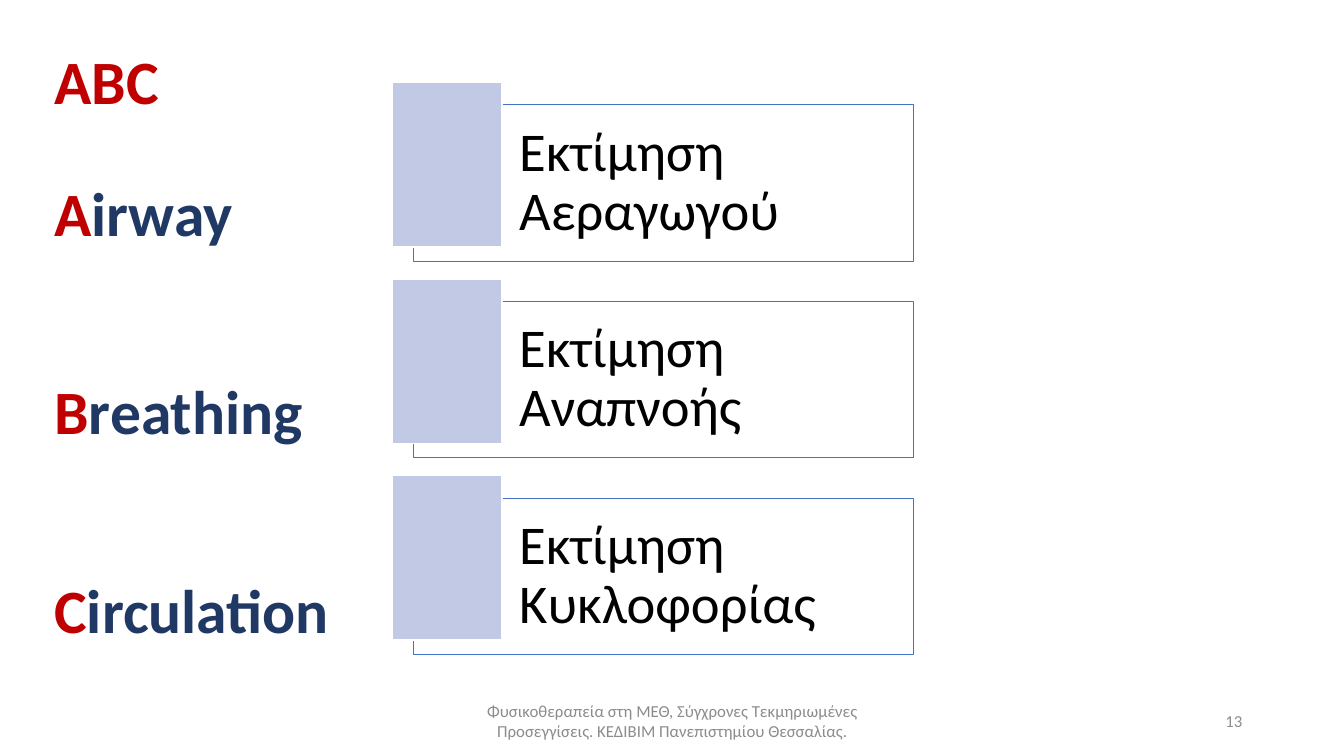
from dataclasses import dataclass

from lxml.etree import SubElement
from pptx import Presentation
from pptx.dml.color import RGBColor
from pptx.enum.shapes import MSO_SHAPE
from pptx.enum.text import MSO_ANCHOR, PP_ALIGN
from pptx.oxml.ns import qn
from pptx.util import Inches, Pt


@dataclass(frozen=True)
class Theme:
    font: str = "Calibri"
    red: str = "C00000"
    navy: str = "203864"
    black: str = "000000"
    gray: str = "8C8C8C"
    white: str = "FFFFFF"
    outline: str = "4472C4"
    tile: str = "C1C9E4"
    heading_size: int = 44
    card_size: int = 39
    footer_size: int = 12
    line_spacing: float = 0.9


THEME = Theme()
WIDTH, HEIGHT = 13.33, 7.5
HEADING_BOX = (0.44, -0.15, 3.98, 7.22)
CARDS_BOX = (3.89, 0.82, 5.17, 5.85)
FOOTER_BOX = (4.42, 6.95, 4.5, 0.4)
NUMBER_BOX = (9.42, 6.95, 3, 0.4)
HEADING_LINES = [("ABC", "", 0), ("A", "irway", 47), ("B", "reathing", 94), ("C", "irculation", 94)]
CARD_TEXTS = ["Εκτίμηση Αεραγωγού", "Εκτίμηση Αναπνοής", "Εκτίμηση Κυκλοφορίας"]
FOOTER = "Φυσικοθεραπεία στη ΜΕΘ, Σύγχρονες Τεκμηριωμένες Προσεγγίσεις. ΚΕΔΙΒΙΜ Πανεπιστημίου Θεσσαλίας."


def add_span(para, text, size, color, bold=False):
    span = para.add_run()
    span.text = text
    span.font.name = THEME.font
    span.font.size = Pt(size)
    span.font.bold = bold
    span.font.color.rgb = RGBColor.from_string(color)


def add_text_frame(page, box):
    frame = page.shapes.add_textbox(*map(Inches, box)).text_frame
    frame.word_wrap = True
    frame.vertical_anchor = MSO_ANCHOR.MIDDLE
    return frame


def add_rectangle(page, box, fill, line, line_width):
    shape = page.shapes.add_shape(MSO_SHAPE.RECTANGLE, *map(Inches, box))
    shape.shadow.inherit = False
    shape.fill.solid()
    shape.fill.fore_color.rgb = RGBColor.from_string(fill)
    shape.line.color.rgb = RGBColor.from_string(line)
    shape.line.width = Pt(line_width)
    return shape


def set_opacity(shape, percent):
    color = shape.fill._xPr.find(qn("a:solidFill"))[0]
    SubElement(color, qn("a:alpha"), val=str(percent * 1000))


def add_heading(page, box):
    frame = add_text_frame(page, box)
    for index, (initial, rest, gap) in enumerate(HEADING_LINES):
        para = frame.add_paragraph() if index else frame.paragraphs[0]
        para.line_spacing = THEME.line_spacing
        para.space_before = Pt(gap)
        add_span(para, initial, THEME.heading_size, THEME.red, True)
        if rest:
            add_span(para, rest, THEME.heading_size, THEME.navy, True)


def add_card(page, box, text):
    left, top, width, height = box
    card_box = (left + 0.21, top + 0.22, width - 0.21, height - 0.4)
    card = add_rectangle(page, card_box, THEME.white, THEME.outline, 0.5)
    set_opacity(card, 40)
    frame = card.text_frame
    frame.word_wrap = True
    frame.vertical_anchor = MSO_ANCHOR.MIDDLE
    frame.margin_left = Inches(1.05)
    frame.margin_top = frame.margin_right = frame.margin_bottom = Inches(0.16)
    para = frame.paragraphs[0]
    para.alignment = PP_ALIGN.LEFT
    para.line_spacing = THEME.line_spacing
    add_span(para, text, THEME.card_size, THEME.black)
    add_rectangle(page, (left, top, 1.09, 1.63), THEME.tile, THEME.white, 1)


def add_cards(page, box):
    left, top, width, height = box
    pitch = height / len(CARD_TEXTS)
    for row, text in enumerate(CARD_TEXTS):
        add_card(page, (left, top + row * pitch, width, pitch), text)


def add_footer(page, box, text, alignment):
    para = add_text_frame(page, box).paragraphs[0]
    para.alignment = alignment
    add_span(para, text, THEME.footer_size, THEME.gray)


def main():
    deck = Presentation()
    deck.slide_width, deck.slide_height = Inches(WIDTH), Inches(HEIGHT)
    page = deck.slides.add_slide(deck.slide_layouts[6])
    add_footer(page, FOOTER_BOX, FOOTER, PP_ALIGN.CENTER)
    add_footer(page, NUMBER_BOX, "13", PP_ALIGN.RIGHT)
    add_heading(page, HEADING_BOX)
    add_cards(page, CARDS_BOX)
    deck.save("out.pptx")


if __name__ == "__main__":
    main()
